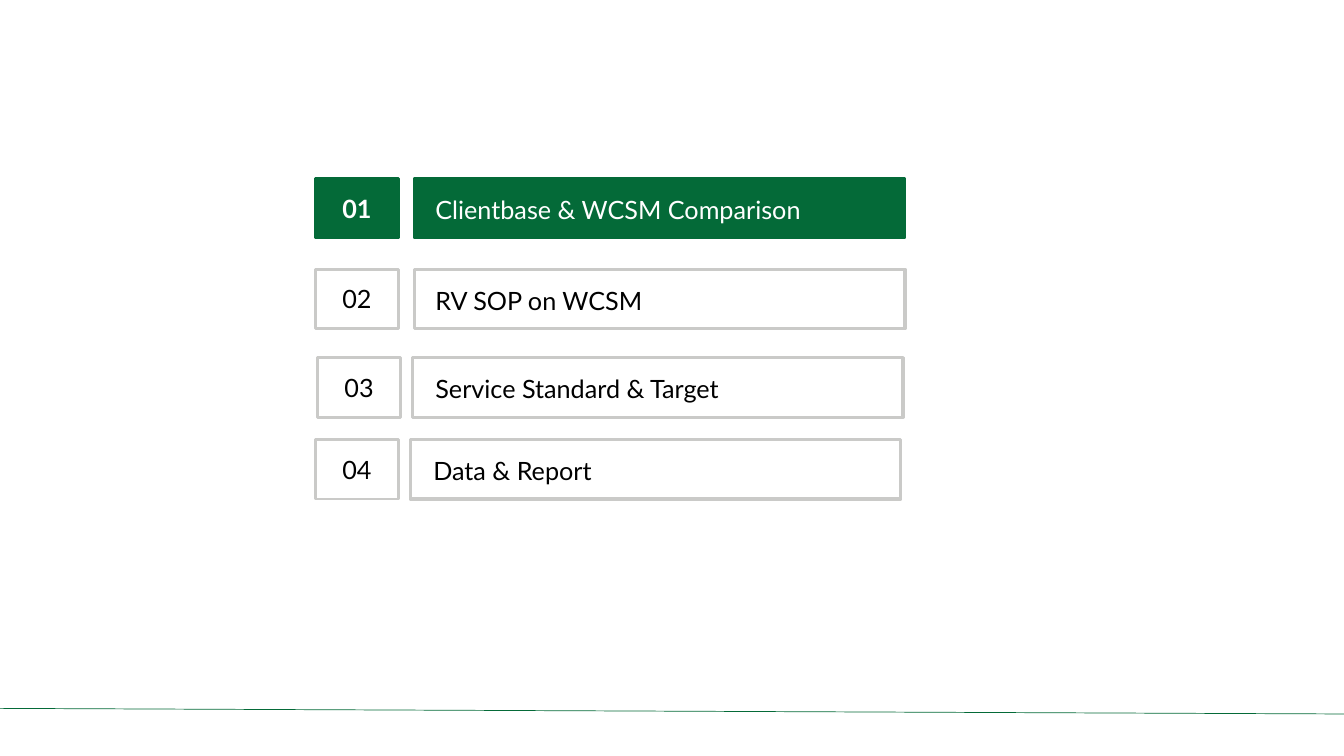
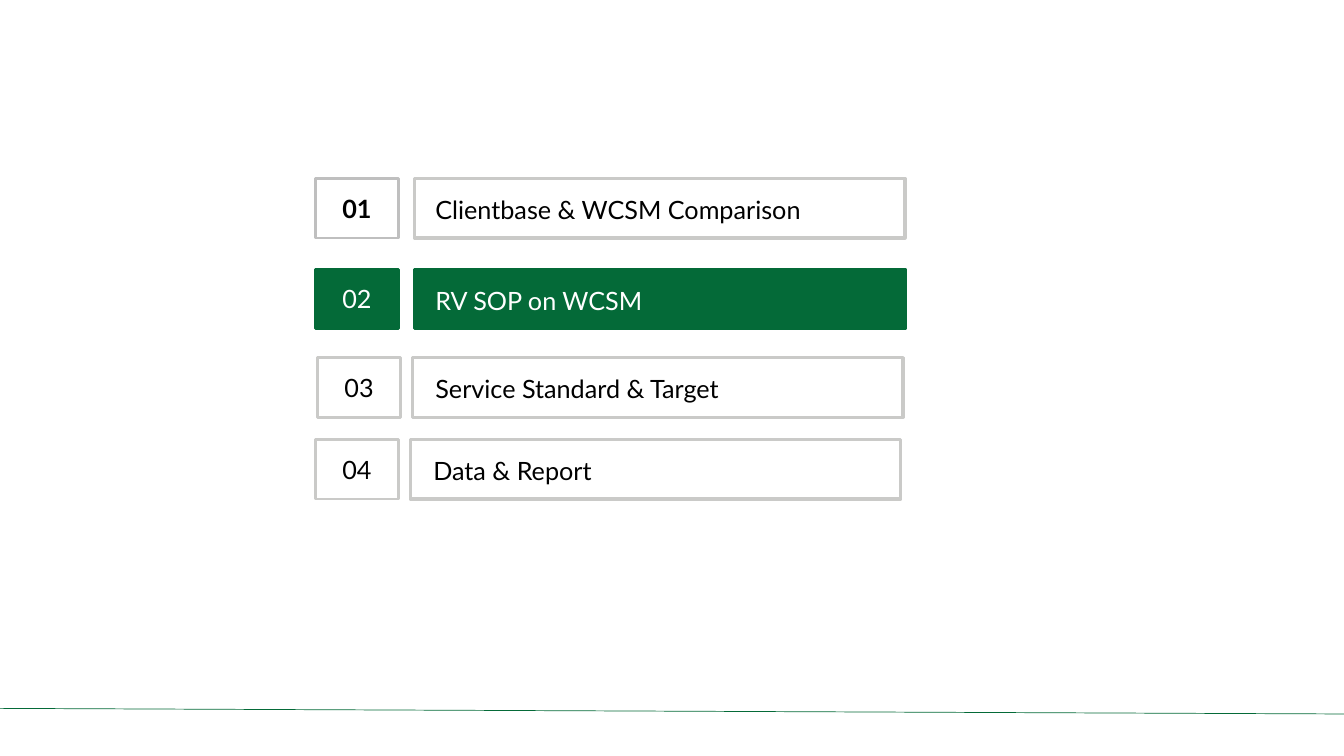
import pptx
import pptx.util
import pptx.dml.color
import pptx.enum.shapes
import pptx.enum.text
import lxml.etree
from dataclasses import dataclass

Pt = pptx.util.Pt
RGB = pptx.dml.color.RGBColor.from_string
ANCHOR = pptx.enum.text.MSO_ANCHOR
ALIGN = pptx.enum.text.PP_ALIGN


@dataclass(frozen=True)
class Theme:
    font: str = "Lato"
    size: float = 18
    accent: str = "046A38"
    edge: str = "CACAC8"
    dark_edge: str = "BFBFBF"
    ink: str = "000000"
    light: str = "FFFFFF"
    number_line: float = 2
    bar_line: float = 2.25
    thin_bar_line: float = 1.5
    footer_line: float = 0.5


THEME = Theme()

# Agenda rows; lefts and tops are in points, inset is the label's left margin
ROWS = [
    dict(title="Clientbase & WCSM Comparison", top=127.5, number_left=225.5,
         bar_left=296, inset=15, bold=True, edge=THEME.dark_edge,
         active_line=THEME.thin_bar_line),
    dict(title="RV SOP on WCSM", top=192.25, number_left=225.5,
         bar_left=296, inset=15),
    dict(title="Service Standard & Target", top=255.5, number_left=227,
         bar_left=294.5, inset=16.5),
    dict(title="Data & Report", top=314, number_left=225.5,
         bar_left=293, inset=16.5),
]
ACTIVE_ROWS = [0, 1]  # one slide for each highlighted row

SLIDE_W, SLIDE_H = 960, 540
NUMBER_W, BAR_W, ROW_H = 59, 350.5, 42.5
LABEL_TOP = 11.5
FOOTER_Y = (506, 510)


def write(tf, text, color, bold=False, align=ALIGN.LEFT,
          anchor=ANCHOR.MIDDLE, left=0, top=0):
    tf.word_wrap = True
    tf.vertical_anchor = anchor
    tf.margin_left, tf.margin_top = Pt(left), Pt(top)
    tf.margin_right = tf.margin_bottom = 0
    p = tf.paragraphs[0]
    p.alignment = align
    r = p.add_run()
    r.text = text
    r.font.name, r.font.size, r.font.bold = THEME.font, Pt(THEME.size), bold
    r.font.color.rgb = RGB(color)


def add_box(slide, left, top, width, active, edge, line_width):
    sp = slide.shapes.add_shape(
        pptx.enum.shapes.MSO_SHAPE.RECTANGLE,
        Pt(left), Pt(top), Pt(width), Pt(ROW_H))
    sp.shadow.inherit = False
    if active:
        sp.fill.solid()
        sp.fill.fore_color.rgb = RGB(THEME.accent)
    else:
        sp.fill.background()
    sp.line.color.rgb = RGB(THEME.accent if active else edge)
    sp.line.width = Pt(line_width)
    return sp


def add_row(slide, number, row, active):
    color = THEME.light if active else THEME.ink
    sp = add_box(slide, row["number_left"], row["top"], NUMBER_W, active,
                 row.get("edge", THEME.edge), THEME.number_line)
    write(sp.text_frame, f"{number:02}", color, bold=row.get("bold", False),
          align=ALIGN.CENTER)

    bar_line = THEME.bar_line
    if active:
        bar_line = row.get("active_line", bar_line)
    sp = add_box(slide, row["bar_left"], row["top"], BAR_W, active,
                 THEME.edge, bar_line)
    write(sp.text_frame, row["title"], color, anchor=ANCHOR.TOP,
          left=row["inset"], top=LABEL_TOP)


def add_footer_rule(prs, slide):
    """Draw the rule on a slide, then move it to the master that all share."""
    rule = slide.shapes.add_connector(
        pptx.enum.shapes.MSO_CONNECTOR.STRAIGHT,
        0, Pt(FOOTER_Y[0]), Pt(SLIDE_W), Pt(FOOTER_Y[1]))
    rule.line.color.rgb = RGB(THEME.accent)
    rule.line.width = Pt(THEME.footer_line)
    lxml.etree.SubElement(rule.element.spPr, pptx.oxml.ns.qn("a:effectLst"))
    prs.slide_master.shapes.element.append(rule.element)


def main():
    prs = pptx.Presentation()
    prs.slide_width, prs.slide_height = Pt(SLIDE_W), Pt(SLIDE_H)
    blank = prs.slide_layouts.get_by_name("Blank")
    for active_row in ACTIVE_ROWS:
        slide = prs.slides.add_slide(blank)
        for i, row in enumerate(ROWS):
            add_row(slide, i + 1, row, i == active_row)
    add_footer_rule(prs, prs.slides[0])
    prs.save("out.pptx")


if __name__ == "__main__":
    main()
